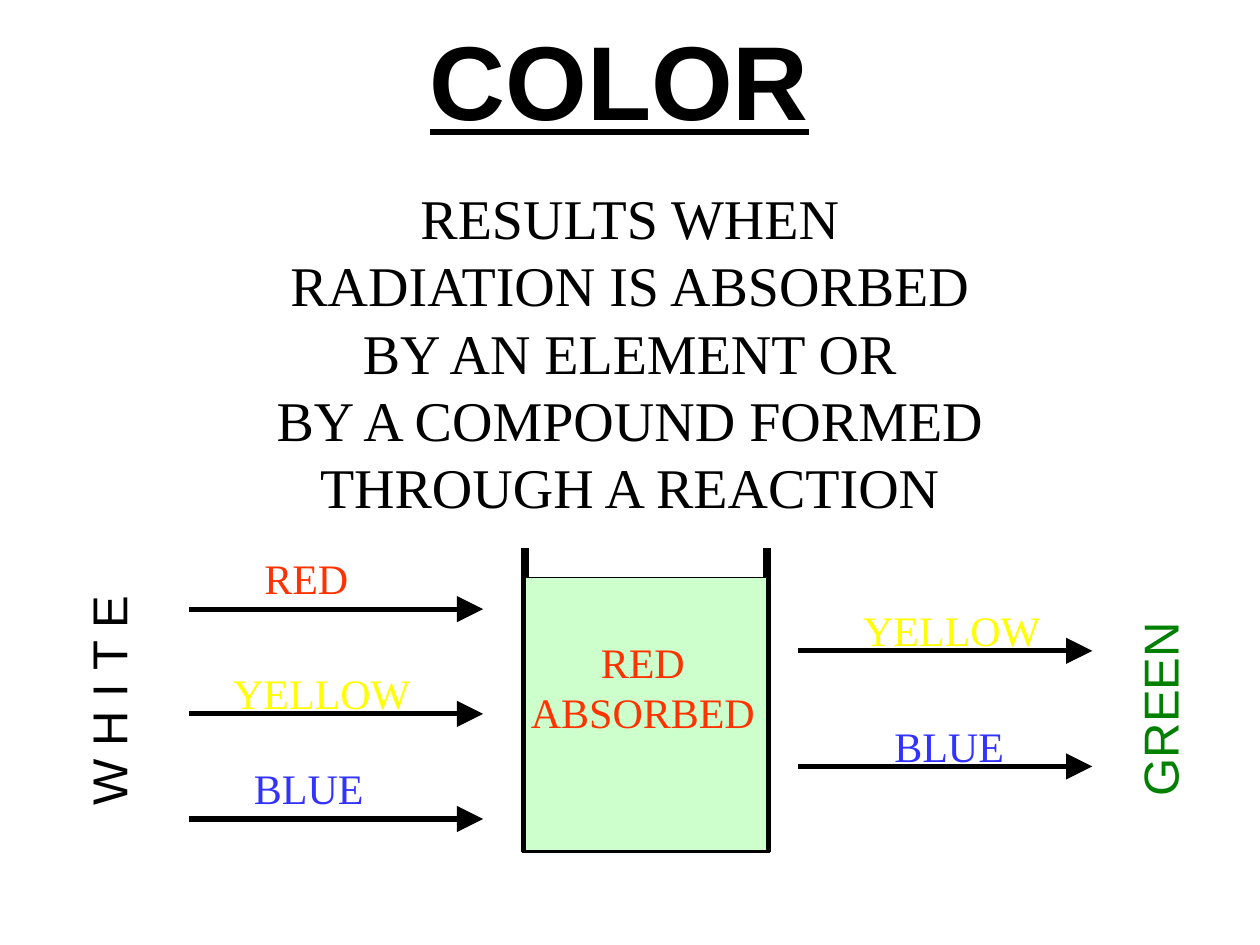
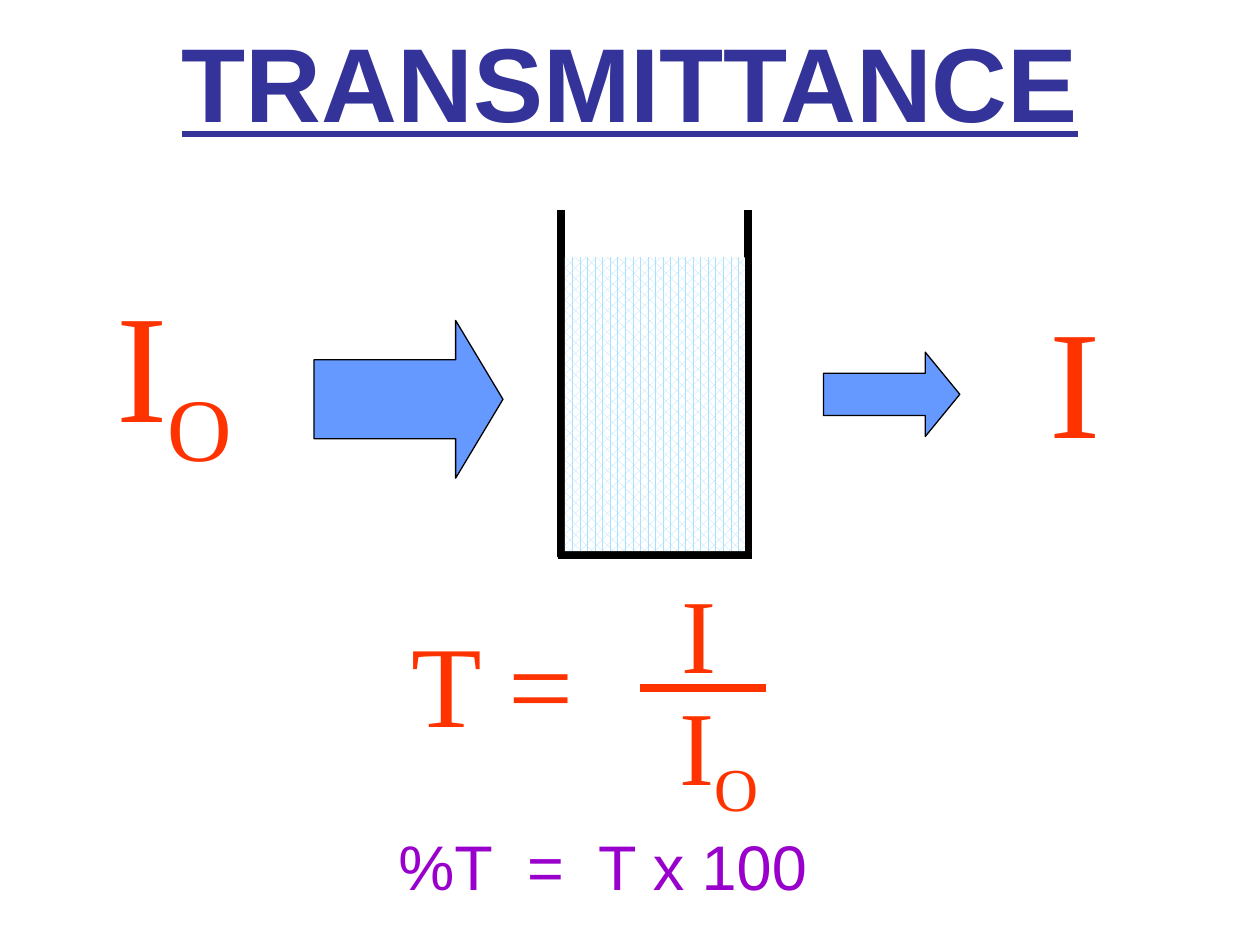
from dataclasses import dataclass
from typing import Optional

from lxml.etree import SubElement
from pptx import Presentation
from pptx.dml.color import RGBColor
from pptx.enum.dml import MSO_PATTERN
from pptx.enum.shapes import MSO_CONNECTOR, MSO_SHAPE
from pptx.enum.text import MSO_ANCHOR, PP_ALIGN
from pptx.oxml.ns import qn
from pptx.util import Cm, Pt

BLACK = RGBColor(0x00, 0x00, 0x00)
WHITE = RGBColor(0xFF, 0xFF, 0xFF)
RED = RGBColor(0xFF, 0x33, 0x00)
YELLOW = RGBColor(0xFF, 0xFF, 0x00)
BLUE = RGBColor(0x33, 0x33, 0xFF)
GREEN = RGBColor(0x00, 0x80, 0x00)
PALE_GREEN = RGBColor(0xCC, 0xFF, 0xCC)
INDIGO = RGBColor(0x33, 0x33, 0x99)
SKY = RGBColor(0xAD, 0xE0, 0xFF)
ARROW_BLUE = RGBColor(0x66, 0x99, 0xFF)
PURPLE = RGBColor(0x99, 0x00, 0xCC)

SANS = "Arial"
SERIF = "Times New Roman"
THIN, RAY, WALL = 0.75, 3, 4.5


@dataclass(frozen=True)
class Area:
    left: float
    top: float
    width: float
    height: float

    def lengths(self) -> tuple:
        return Cm(self.left), Cm(self.top), Cm(self.width), Cm(self.height)


@dataclass(frozen=True)
class Span:
    text: str
    subscript: bool = False
    spacing: float = 0


@dataclass(frozen=True)
class Ray:
    color_name: str
    color: RGBColor
    start: float
    height: float
    label: Area


@dataclass(frozen=True)
class Symbol:
    spans: list
    area: Area
    size: float


@dataclass(frozen=True)
class Beam:
    area: Area
    head: float


@dataclass(frozen=True)
class Cuvette:
    left: float
    right: float
    top: float
    base: float


def add_text(page, lines: list, area: Area, *, size: float, color: RGBColor,
             font: str = SERIF, align=PP_ALIGN.LEFT, anchor=MSO_ANCHOR.TOP,
             wrap: bool = False, bold: bool = False, underline: bool = False,
             rotation: float = 0) -> None:
    box = page.shapes.add_textbox(*area.lengths())
    box.rotation = rotation
    frame = box.text_frame
    frame.word_wrap = wrap
    frame.vertical_anchor = anchor
    for index, spans in enumerate(lines):
        para = frame.add_paragraph() if index else frame.paragraphs[0]
        para.alignment = align
        for span in spans:
            run = para.add_run()
            run.text = span.text
            run.font.name = font
            run.font.size = Pt(size)
            run.font.bold = bold
            run.font.underline = underline
            run.font.color.rgb = color
            properties = run._r.get_or_add_rPr()
            if span.subscript:
                properties.set("baseline", "-25000")
            if span.spacing:
                properties.set("spc", str(int(span.spacing * 100)))


def add_title(page, text: str, area: Area, color: RGBColor) -> None:
    add_text(page, [[Span(text)]], area, size=60, color=color, font=SANS, bold=True,
             underline=True, wrap=True, align=PP_ALIGN.CENTER, anchor=MSO_ANCHOR.MIDDLE)


def add_line(page, start: tuple, end: tuple, *, width: float,
             color: RGBColor = BLACK, arrow: bool = False) -> None:
    line = page.shapes.add_connector(MSO_CONNECTOR.STRAIGHT, Cm(start[0]), Cm(start[1]),
                                     Cm(end[0]), Cm(end[1]))
    line.line.color.rgb = color
    line.line.width = Pt(width)
    if arrow:
        SubElement(line.line._get_or_add_ln(), qn("a:tailEnd"), type="triangle",
                   w="lg", len="lg")
    SubElement(line._element.spPr, qn("a:effectLst"))


def add_block(page, kind, area: Area, fill: RGBColor, *, outline: bool = True,
              pattern=None):
    block = page.shapes.add_shape(kind, *area.lengths())
    block.shadow.inherit = False
    if pattern is None:
        block.fill.solid()
    else:
        block.fill.patterned()
        block.fill.pattern = pattern
        block.fill.back_color.rgb = WHITE
    block.fill.fore_color.rgb = fill
    if outline:
        block.line.color.rgb = BLACK
        block.line.width = Pt(THIN)
    else:
        block.line.fill.background()
    return block


def add_cuvette(page, cuvette: Cuvette, surface: Optional[float] = None) -> None:
    for side in (cuvette.left, cuvette.right):
        add_line(page, (side, cuvette.top), (side, cuvette.base + 0.05), width=WALL)
    add_line(page, (cuvette.left - 0.07, cuvette.base),
             (cuvette.right + 0.07, cuvette.base), width=WALL)
    if surface is not None:
        add_line(page, (cuvette.left, surface), (cuvette.right, surface), width=THIN)


def build_color_page(page) -> None:
    add_title(page, "COLOR", Area(1.69, 0, 21.59, 3.18), BLACK)
    definition = ["RESULTS WHEN", "RADIATION IS ABSORBED", "BY AN ELEMENT OR",
                  "BY A COMPOUND FORMED", "THROUGH A REACTION"]
    add_text(page, [[Span(line)] for line in definition], Area(0, 3.58, 25.4, 7.09),
             size=32, color=BLACK, align=PP_ALIGN.CENTER, wrap=True)
    add_text(page, [[Span("W H I T E")]], Area(-0.21, 13.38, 4.78, 1.45), size=28,
             color=BLACK, font=SANS, rotation=270)

    incoming, outgoing, length = 3.81, 16.09, 5.93
    rays = [
        Ray("RED", RED, incoming, 12.28, Area(5.08, 11.01, 2.31, 1.27)),
        Ray("BLUE", BLUE, incoming, 16.51, Area(4.87, 15.24, 2.82, 1.27)),
        Ray("YELLOW", YELLOW, incoming, 14.39, Area(4.45, 13.34, 4.32, 1.27)),
        Ray("YELLOW", YELLOW, outgoing, 13.12, Area(17.15, 12.07, 4.32, 1.27)),
        Ray("BLUE", BLUE, outgoing, 15.45, Area(17.78, 14.39, 2.82, 1.27)),
    ]
    for ray in rays:
        add_line(page, (ray.start, ray.height), (ray.start + length, ray.height),
                 width=RAY, arrow=True)
        add_text(page, [[Span(ray.color_name)]], ray.label, size=24, color=ray.color)

    add_cuvette(page, Cuvette(10.59, 15.46, 11.05, 17.12), surface=11.64)
    add_block(page, MSO_SHAPE.RECTANGLE, Area(10.59, 11.64, 4.87, 5.5), PALE_GREEN)
    add_text(page, [[Span("RED")], [Span("ABSORBED")]], Area(10.37, 12.7, 5.18, 2.29),
             size=24, color=RED, align=PP_ALIGN.CENTER)
    add_text(page, [[Span("GREEN")]], Area(21.37, 13.57, 4.01, 1.45), size=28,
             color=GREEN, font=SANS, rotation=270)


def build_transmittance_page(page) -> None:
    add_title(page, "TRANSMITTANCE", Area(0, 0.04, 25.4, 3.18), INDIGO)
    transmitted = [Span("I")]
    incident = [Span("I"), Span("O", subscript=True)]
    symbols = [
        Symbol(transmitted, Area(13.49, 11.33, 1.35, 2.79), 60),
        Symbol([Span("T =")], Area(8.04, 12.22, 3.96, 3.05), 66),
        Symbol(incident, Area(13.44, 13.59, 2.44, 2.79), 60),
        Symbol(incident, Area(2.09, 5.29, 3.33, 3.99), 88),
        Symbol(transmitted, Area(20.9, 5.61, 1.73, 3.99), 88),
    ]
    for symbol in symbols:
        add_text(page, [symbol.spans], symbol.area, size=symbol.size, color=RED)

    add_cuvette(page, Cuvette(11.31, 15.08, 4.23, 11.18))
    add_block(page, MSO_SHAPE.RECTANGLE, Area(11.39, 5.19, 3.63, 5.92), SKY,
              outline=False, pattern=MSO_PATTERN.PERCENT_60)
    beams = [Beam(Area(6.33, 6.46, 3.81, 3.18), 0.3),
             Beam(Area(16.6, 7.1, 2.75, 1.7), 0.41)]
    for beam in beams:
        arrow = add_block(page, MSO_SHAPE.RIGHT_ARROW, beam.area, ARROW_BLUE)
        arrow.adjustments[0] = 0.5
        arrow.adjustments[1] = beam.head

    add_line(page, (12.91, 13.87), (15.45, 13.87), width=WALL, color=RED)
    wide_space = Span(" ", spacing=9.5)
    percent = [Span("%T"), wide_space, Span("="), wide_space, Span("T x 100")]
    add_text(page, [percent], Area(7.72, 16.56, 8.86, 1.78), size=36, color=PURPLE,
             font=SANS, align=PP_ALIGN.CENTER)


def main() -> None:
    deck = Presentation()
    deck.slide_width = Cm(25.4)
    deck.slide_height = Cm(19.05)
    for build in (build_color_page, build_transmittance_page):
        build(deck.slides.add_slide(deck.slide_layouts[6]))
    deck.save("out.pptx")


if __name__ == "__main__":
    main()
